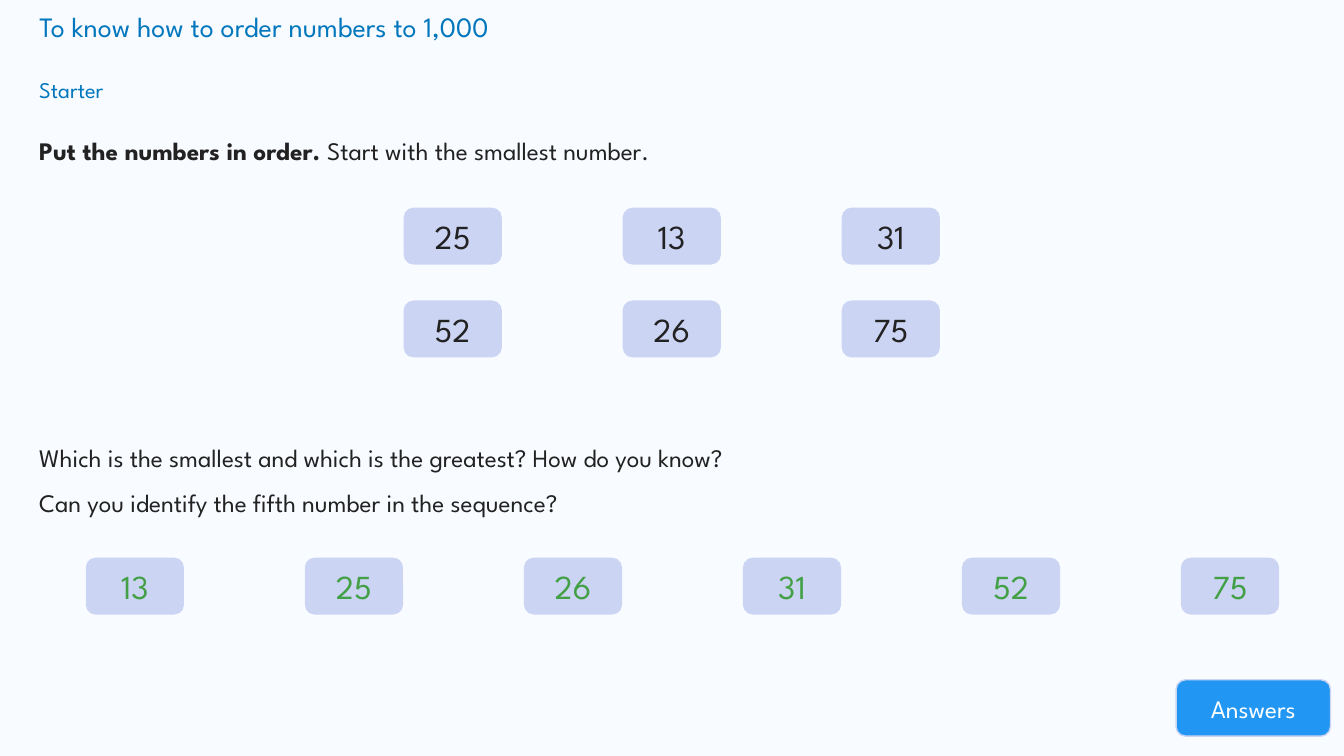
"""Build the starter slide on ordering numbers."""
import dataclasses

import pptx
import pptx.dml.color
import pptx.enum.shapes
import pptx.enum.text
import pptx.util

Cm = pptx.util.Cm
ALIGN = pptx.enum.text.PP_ALIGN
ANCHOR = pptx.enum.text.MSO_ANCHOR

TITLE = "To know how to order numbers to 1,000"
SECTION = "Starter"
TASK = [("Put the numbers in order. ", True), ("Start with the smallest number.", False)]
QUESTIONS = [
    "Which is the smallest and which is the greatest? How do you know?",
    "Can you identify the fifth number in the sequence?",
]
NUMBERS = [[25, 13, 31], [52, 26, 75]]
BUTTON = "Answers"


@dataclasses.dataclass(frozen=True)
class Theme:
    """Hold the colours, font and type sizes."""
    font: str = "League Spartan"
    page: str = "F8FBFF"
    heading: str = "0277BD"
    ink: str = "222222"
    answer: str = "43A047"
    card: str = "CCD4F4"
    button: str = "2196F3"
    white: str = "FFFFFF"
    title_size: int = 20
    section_size: int = 16
    body_size: int = 18
    number_size: int = 24


THEME = Theme()
MARGIN = 0.74
WIDE = 32.61
CARD_WIDTH, CARD_HEIGHT = 2.44, 1.4
COLUMN_STEP, ROW_STEP = 5.52, 2.34
GRID_LEFT, GRID_TOP = 10.19, 5.25
ANSWER_LEFT, ANSWER_TOP = 2.18, 14.07


def rgb(value):
    """Return a colour object for a hex value."""
    return pptx.dml.color.RGBColor.from_string(value)


def write(box, lines, size, colour, align=ALIGN.LEFT, anchor=ANCHOR.TOP, spacing=None):
    """Fill a box with paragraphs made of (text, bold) spans."""
    frame = box.text_frame
    frame.word_wrap = True
    frame.auto_size = pptx.enum.text.MSO_AUTO_SIZE.NONE
    frame.vertical_anchor = anchor
    for index, line in enumerate(lines):
        para = frame.add_paragraph() if index else frame.paragraphs[0]
        para.alignment = align
        para.line_spacing = spacing
        for text, bold in line:
            span = para.add_run()
            span.text = text
            look = {"name": THEME.font, "size": pptx.util.Pt(size), "bold": bold}
            for key, value in look.items():
                setattr(span.font, key, value)
            span.font.color.rgb = rgb(colour)


def add_text(page, place, lines, size, colour, spacing=None):
    """Add a text box at a place given in centimetres."""
    box = page.shapes.add_textbox(*map(Cm, place))
    write(box, lines, size, colour, spacing=spacing)


def add_card(page, place, text, size, colour, fill):
    """Add a rounded card with centred text."""
    kind = pptx.enum.shapes.MSO_SHAPE.ROUNDED_RECTANGLE
    box = page.shapes.add_shape(kind, *map(Cm, place))
    box.shadow.inherit = False
    box.fill.solid()
    box.fill.fore_color.rgb = rgb(fill)
    box.line.color.rgb = rgb(THEME.card)
    box.line.width = pptx.util.Pt(1)
    write(box, [[(text, False)]], size, colour, ALIGN.CENTER, ANCHOR.MIDDLE)


def add_number_row(page, numbers, left, top, colour):
    """Add one row of evenly spaced number cards."""
    for column, number in enumerate(numbers):
        place = (left + column * COLUMN_STEP, top, CARD_WIDTH, CARD_HEIGHT)
        add_card(page, place, str(number), THEME.number_size, colour, THEME.card)


def main():
    """Create the deck and save it."""
    deck = pptx.Presentation()
    deck.slide_width, deck.slide_height = Cm(33.87), Cm(19.05)
    page = deck.slides.add_slide(deck.slide_layouts[5])
    page.background.fill.solid()
    page.background.fill.fore_color.rgb = rgb(THEME.page)

    title = page.shapes.title
    place = {"left": MARGIN, "top": 0.1, "width": 31.34, "height": 1.12}
    for key, value in place.items():
        setattr(title, key, Cm(value))
    write(title, [[(TITLE, False)]], THEME.title_size, THEME.heading)

    add_text(page, (MARGIN, 1.8, 7.54, 1.17), [[(SECTION, False)]],
             THEME.section_size, THEME.heading)
    add_text(page, (MARGIN, 2.9, WIDE, 1.42), [TASK],
             THEME.body_size, THEME.ink, 1.5)
    add_text(page, (MARGIN, 10.64, WIDE, 2.74), [[(line, False)] for line in QUESTIONS],
             THEME.body_size, THEME.ink, 1.5)

    for row, numbers in enumerate(NUMBERS):
        add_number_row(page, numbers, GRID_LEFT, GRID_TOP + row * ROW_STEP, THEME.ink)
    add_number_row(page, sorted(sum(NUMBERS, [])), ANSWER_LEFT, ANSWER_TOP, THEME.answer)
    add_card(page, (29.64, 17.13, 3.89, 1.42), BUTTON,
             THEME.body_size, THEME.white, THEME.button)
    deck.save("out.pptx")


if __name__ == "__main__":
    main()
